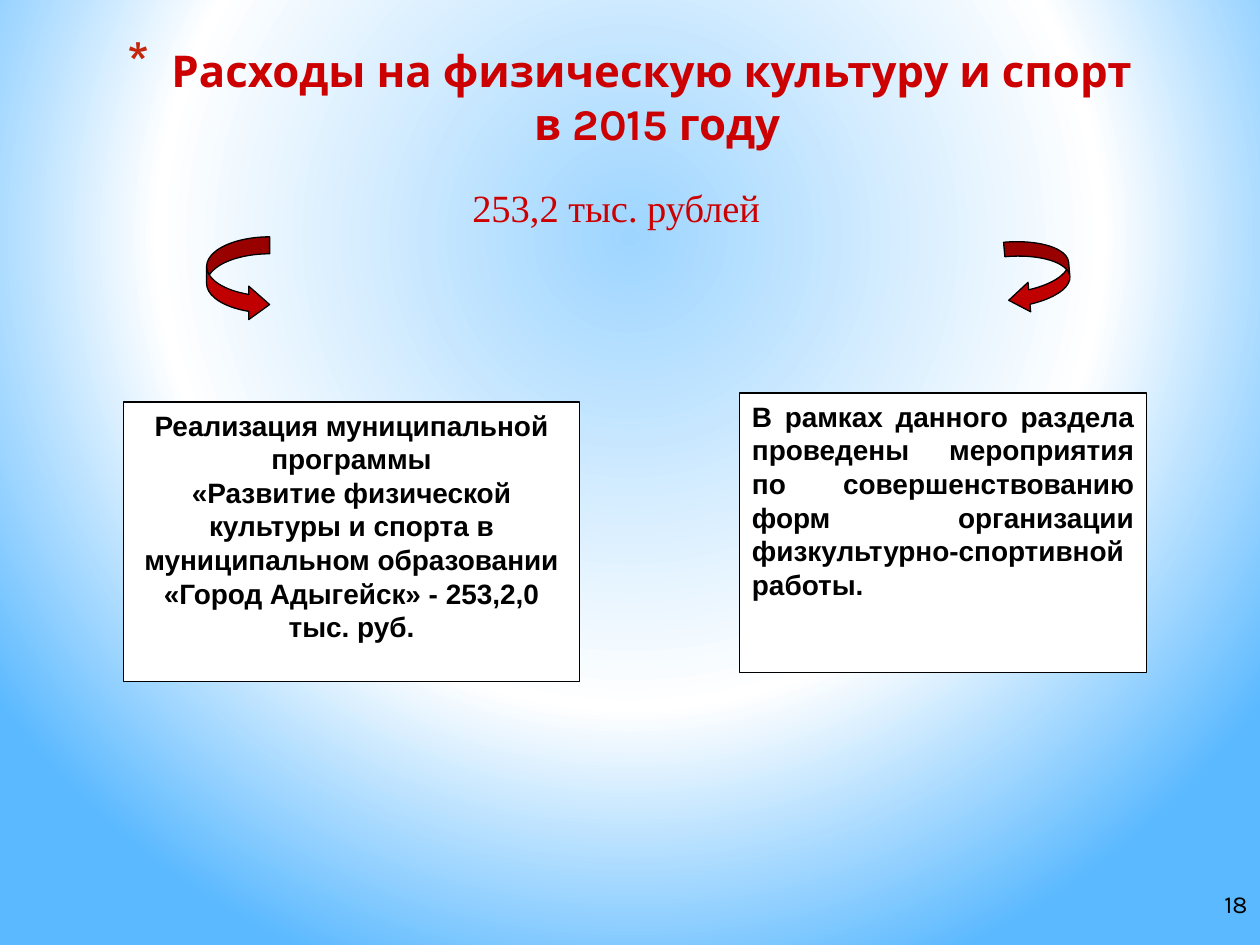
from dataclasses import dataclass

from pptx import Presentation
from pptx.dml.color import RGBColor
from pptx.enum.shapes import MSO_SHAPE
from pptx.enum.text import MSO_ANCHOR, PP_ALIGN
from pptx.oxml import parse_xml
from pptx.oxml.ns import nsdecls
from pptx.shapes.autoshape import Shape
from pptx.slide import Slide
from pptx.text.text import TextFrame
from pptx.util import Pt

RECTANGLE = MSO_SHAPE.RECTANGLE
RIGHT_CURVE, LEFT_CURVE = MSO_SHAPE.CURVED_RIGHT_ARROW, MSO_SHAPE.CURVED_LEFT_ARROW
CENTER, RIGHT, JUSTIFY = PP_ALIGN.CENTER, PP_ALIGN.RIGHT, PP_ALIGN.JUSTIFY
TOP, MIDDLE = MSO_ANCHOR.TOP, MSO_ANCHOR.MIDDLE


@dataclass(frozen=True)
class Theme:
    heading_font: str = "Karla"
    amount_font: str = "Times New Roman"
    body_font: str = "Arial"
    heading_size: float = 25
    amount_size: float = 22
    body_size: float = 16
    number_size: float = 14
    red: str = "CC0000"
    arrow: str = "C00000"
    bullet: str = "C3260C"
    ink: str = "000000"
    paper: str = "FFFFFF"
    line_width: float = 0.75
    glow: tuple[tuple[int, str], ...] = ((0, "9ED5FF"), (60, "FFFFFF"), (100, "5BB9FF"))


THEME = Theme()


@dataclass(frozen=True)
class Area:
    left: float
    top: float
    width: float
    height: float

    def lengths(self) -> tuple[Pt, Pt, Pt, Pt]:
        return Pt(self.left), Pt(self.top), Pt(self.width), Pt(self.height)


@dataclass(frozen=True)
class Style:
    font: str
    size: float
    color: str
    align: PP_ALIGN
    bold: bool = False


@dataclass(frozen=True)
class Label:
    area: Area
    text: str
    style: Style
    anchor: MSO_ANCHOR = TOP
    wrap: bool = True


@dataclass(frozen=True)
class Panel:
    area: Area
    text: str
    align: PP_ALIGN


@dataclass(frozen=True)
class Arrow:
    kind: MSO_SHAPE
    area: Area
    adjustments: tuple[float, float, float]
    rotation: float = 0


TITLE = Label(
    Area(36, 21.6, 653.76, 84.96),
    "Расходы на физическую культуру и спорт \vв 2015 году",
    Style(THEME.heading_font, THEME.heading_size, THEME.red, CENTER, True),
)
AMOUNT = Label(
    Area(28.08, 101.52, 648, 364.32),
    "253,2 тыс. рублей",
    Style(THEME.amount_font, THEME.amount_size, THEME.red, CENTER),
)
PAGE_NUMBER = Label(
    Area(570.24, 498.24, 149.76, 36),
    "18",
    Style(THEME.heading_font, THEME.number_size, THEME.ink, RIGHT),
    MIDDLE,
    False,
)
PANELS = (
    Panel(
        Area(70.56, 229.68, 260.64, 159.84),
        "Реализация муниципальной программы\n"
        "«Развитие физической культуры и спорта в муниципальном образовании "
        "«Город Адыгейск» - 253,2,0 тыс. руб.",
        CENTER,
    ),
    Panel(
        Area(422.64, 224.64, 232.56, 159.84),
        "В рамках данного раздела проведены мероприятия по совершенствованию "
        "форм организации физкультурно-спортивной работы.",
        JUSTIFY,
    ),
)
ARROWS = (
    Arrow(RIGHT_CURVE, Area(118.08, 135.36, 36, 48.24), (0.27, 0.53, 0.33)),
    Arrow(LEFT_CURVE, Area(575.28, 136.8, 36, 41.76), (0.23, 0.47, 0.33), 354.9),
)


def paint_background(slide: Slide) -> None:
    stops = "".join(
        f'<a:gs pos="{position * 1000}"><a:srgbClr val="{color}"/></a:gs>'
        for position, color in THEME.glow
    )
    slide.element.cSld.insert(0, parse_xml(
        f'<p:bg {nsdecls("p", "a")}><p:bgPr><a:gradFill rotWithShape="1">'
        f'<a:gsLst>{stops}</a:gsLst><a:path path="circle">'
        '<a:fillToRect l="20000" t="10000" r="20000" b="60000"/></a:path>'
        '</a:gradFill><a:effectLst/></p:bgPr></p:bg>'
    ))


def write_text(frame: TextFrame, text: str, style: Style, anchor: MSO_ANCHOR = TOP) -> None:
    frame.text = text
    frame.vertical_anchor = anchor
    for paragraph in frame.paragraphs:
        paragraph.alignment = style.align
        paragraph.font.name = style.font
        paragraph.font.size = Pt(style.size)
        paragraph.font.bold = style.bold
        paragraph.font.color.rgb = RGBColor.from_string(style.color)


def add_label(slide: Slide, label: Label) -> TextFrame:
    frame = slide.shapes.add_textbox(*label.area.lengths()).text_frame
    frame.word_wrap = label.wrap
    write_text(frame, label.text, label.style, label.anchor)
    return frame


def add_title(slide: Slide) -> None:
    properties = add_label(slide, TITLE).paragraphs[0]._p.get_or_add_pPr()
    properties.set("marL", str(Pt(25.2)))
    properties.set("indent", str(Pt(-25.2)))
    bullet_parts = (
        f'<a:buClr {nsdecls("a")}><a:srgbClr val="{THEME.bullet}"/></a:buClr>',
        f'<a:buSzPct {nsdecls("a")} val="128000"/>',
        f'<a:buChar {nsdecls("a")} char="*"/>',
    )
    for position, part in enumerate(bullet_parts):
        properties.insert(position, parse_xml(part))


def add_amount(slide: Slide) -> None:
    paragraph = add_label(slide, AMOUNT).paragraphs[0]
    paragraph.space_before = Pt(THEME.amount_size * 0.2)
    paragraph.space_after = Pt(3)


def add_outlined(slide: Slide, kind: MSO_SHAPE, area: Area, fill: str) -> Shape:
    shape = slide.shapes.add_shape(kind, *area.lengths())
    shape.shadow.inherit = False
    shape.fill.solid()
    shape.fill.fore_color.rgb = RGBColor.from_string(fill)
    shape.line.color.rgb = RGBColor.from_string(THEME.ink)
    shape.line.width = Pt(THEME.line_width)
    return shape


def add_panel(slide: Slide, panel: Panel) -> None:
    frame = add_outlined(slide, RECTANGLE, panel.area, THEME.paper).text_frame
    frame.word_wrap = True
    style = Style(THEME.body_font, THEME.body_size, THEME.ink, panel.align, True)
    write_text(frame, panel.text, style)


def add_arrow(slide: Slide, arrow: Arrow) -> None:
    shape = add_outlined(slide, arrow.kind, arrow.area, THEME.arrow)
    shape.rotation = arrow.rotation
    for index, value in enumerate(arrow.adjustments):
        shape.adjustments[index] = value


def main() -> None:
    deck = Presentation()
    deck.slide_width, deck.slide_height = Pt(720), Pt(540)
    slide = deck.slides.add_slide(deck.slide_layouts[6])
    paint_background(slide)
    add_label(slide, PAGE_NUMBER)
    add_title(slide)
    add_amount(slide)
    for panel in PANELS:
        add_panel(slide, panel)
    for arrow in ARROWS:
        add_arrow(slide, arrow)
    deck.save("out.pptx")


if __name__ == "__main__":
    main()
